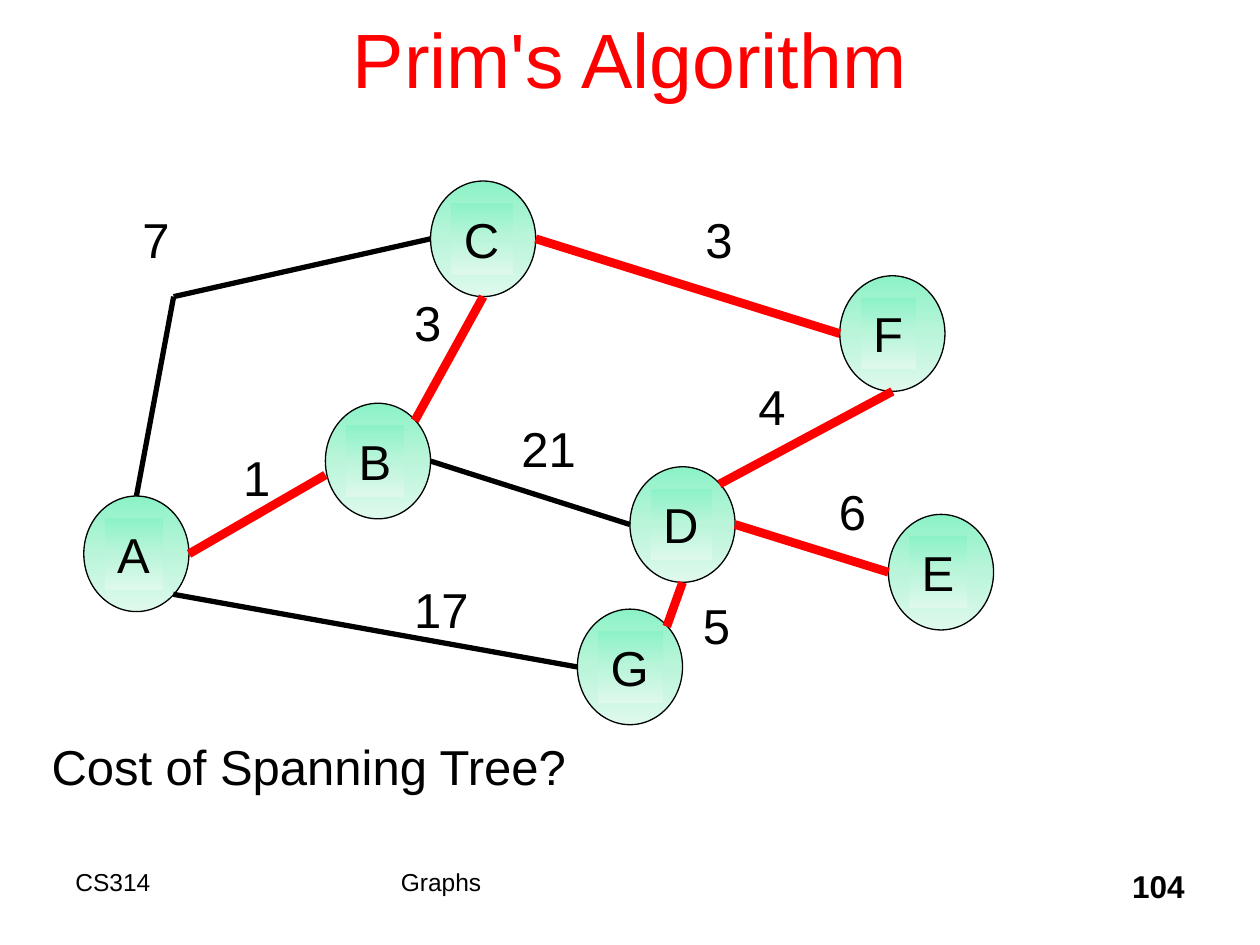
from copy import deepcopy

from lxml.etree import SubElement
from pptx import Presentation
from pptx.dml.color import RGBColor
from pptx.enum.shapes import MSO_CONNECTOR, MSO_SHAPE
from pptx.enum.text import MSO_ANCHOR, MSO_AUTO_SIZE as AUTO, PP_ALIGN as ALIGN
from pptx.oxml.ns import qn
from pptx.util import Cm, Pt

COLORS = {"black": "000000", "red": "FF0000",
          "mint": "8CF2C6", "light_mint": "BAF5DA", "pale_mint": "DEF9EC"}
FONT = "Arial"
NODE_W, NODE_H = 2.12, 2.33
LABEL_H = 1.45

# name: (left, top, label width), in cm from the corner of the graph
NODES = {
    "A": (0, 6.35, 1.17),
    "B": (4.87, 4.48, 1.17),
    "C": (6.99, 0, 1.24),
    "F": (15.24, 1.91, 1.12),
    "D": (11.01, 5.76, 1.24),
    "E": (16.22, 6.72, 1.17),
    "G": (9.95, 8.63, 1.3),
}
# points on a node's outline, as fractions of its width and height
SIDES = {"n": (0.5, 0), "ne": (0.85, 0.15), "e": (1, 0.5), "se": (0.85, 0.85),
         "s": (0.5, 1), "w": (0, 0.5), "wsw": (0, 0.62)}
TREE_EDGES = [("A", "e", "B", "wsw"), ("B", "ne", "C", "s"), ("C", "e", "F", "w"),
              ("F", "s", "D", "ne"), ("D", "e", "E", "w"), ("D", "s", "G", "ne")]
OTHER_EDGES = [("B", "e", "D", "w"), ("A", "se", "G", "w")]
BEND = (1.81, 2.33)  # corner of the edge from A to C
WEIGHTS = [("1", 2.96, 5.24), ("3", 6.41, 2.12), ("3", 12.28, 0.44),
           ("21", 8.57, 4.66), ("4", 13.35, 3.82), ("6", 14.97, 5.93),
           ("17", 6.41, 7.91), ("5", 12.23, 8.24), ("7", 0.93, 0.44)]


def rgb(name):
    return RGBColor.from_string(COLORS[name])


def add_run(p, text, size, color="black", bold=False):
    r = p.add_run()
    r.text = text
    r.font.name, r.font.size, r.font.bold = FONT, Pt(size), bold
    r.font.color.rgb = rgb(color)


def write_label(sp, text, wrap=False):
    """Put 28 pt text in a shape that grows with it."""
    tf = sp.text_frame
    tf.word_wrap = wrap
    tf.auto_size = AUTO.SHAPE_TO_FIT_TEXT
    tf.vertical_anchor = MSO_ANCHOR.TOP
    p = tf.paragraphs[0]
    p.alignment = ALIGN.LEFT
    p.space_before = Pt(5.6)
    add_run(p, text, 28)


def fill_mint(sp):
    """Three-stop gradient, darkest at the top."""
    sp.shadow.inherit = False
    sp.fill.gradient()
    sp.fill.gradient_angle = 270
    first = sp._element.spPr.find(".//" + qn("a:gs"))
    first.addnext(deepcopy(first))
    names = ("mint", "light_mint", "pale_mint")
    for i, (stop, name) in enumerate(zip(sp.fill.gradient_stops, names)):
        stop.position = i / 2
        stop.color.rgb = rgb(name)


def draw_node(s, name, left, top, label_w):
    shapes = s.shapes.add_group_shape().shapes
    oval = shapes.add_shape(MSO_SHAPE.OVAL, Cm(left), Cm(top), Cm(NODE_W), Cm(NODE_H))
    fill_mint(oval)
    oval.line.color.rgb = rgb("black")
    oval.line.width = Pt(0.75)
    label = shapes.add_shape(MSO_SHAPE.RECTANGLE, Cm(left + 0.42), Cm(top + 0.44),
                             Cm(label_w), Cm(LABEL_H))
    fill_mint(label)
    label.line.fill.background()
    write_label(label, name)


def draw_edge(s, left, top, start, end, color, width):
    (x1, y1), (x2, y2) = start, end
    line = s.shapes.add_connector(MSO_CONNECTOR.STRAIGHT, Cm(left + x1), Cm(top + y1),
                                  Cm(left + x2), Cm(top + y2))
    line.line.color.rgb = rgb(color)
    line.line.width = Pt(width)
    SubElement(line._element.spPr, qn("a:effectLst"))


def node_point(name, side):
    x, y, _ = NODES[name]
    fx, fy = SIDES[side]
    return x + fx * NODE_W, y + fy * NODE_H


def draw_graph(s, left, top):
    for name, (x, y, label_w) in NODES.items():
        draw_node(s, name, left + x, top + y, label_w)
    for edges, color, width in ((TREE_EDGES, "red", 5), (OTHER_EDGES, "black", 3)):
        for a, a_side, b, b_side in edges:
            draw_edge(s, left, top, node_point(a, a_side), node_point(b, b_side),
                      color, width)
    for start, end in ((node_point("A", "n"), BEND), (BEND, node_point("C", "w"))):
        draw_edge(s, left, top, start, end, "black", 3)
    for text, x, y in WEIGHTS:
        width = 0.51 + 0.56 * len(text)
        write_label(s.shapes.add_textbox(Cm(left + x), Cm(top + y), Cm(width),
                                         Cm(LABEL_H)), text)


def draw_title(s, left, top, width, height):
    title = s.shapes.title
    title.left, title.top, title.width, title.height = map(Cm, (left, top, width, height))
    title.text_frame.vertical_anchor = MSO_ANCHOR.MIDDLE
    p = title.text_frame.paragraphs[0]
    p.alignment = ALIGN.CENTER
    add_run(p, "Prim's Algorithm", 44, "red")


def draw_footer(s, left, top, height):
    for text, x, width, size, bold, align in (
            ("CS314", 0, 6.35, 14, False, ALIGN.LEFT),
            ("Graphs", 6.56, 9.74, 14, False, ALIGN.LEFT),
            ("104", 17.57, 5.29, 18, True, ALIGN.RIGHT)):
        box = s.shapes.add_textbox(Cm(left + x), Cm(top), Cm(width), Cm(height))
        box.text_frame.word_wrap = True
        p = box.text_frame.paragraphs[0]
        p.alignment = align
        add_run(p, text, size, bold=bold)


def main():
    prs = Presentation()
    prs.slide_width, prs.slide_height = Cm(25.4), Cm(19.05)
    s = prs.slides.add_slide(prs.slide_layouts[5])
    draw_title(s, 1.9, -0.43, 21.6, 3.18)
    draw_footer(s, 1.27, 17.35, 1.27)
    draw_graph(s, 1.69, 3.65)
    question = s.shapes.add_textbox(Cm(0.79), Cm(14.73), Cm(25.6), Cm(LABEL_H))
    write_label(question, "Cost of Spanning Tree?", wrap=True)
    prs.save("out.pptx")


if __name__ == "__main__":
    main()
